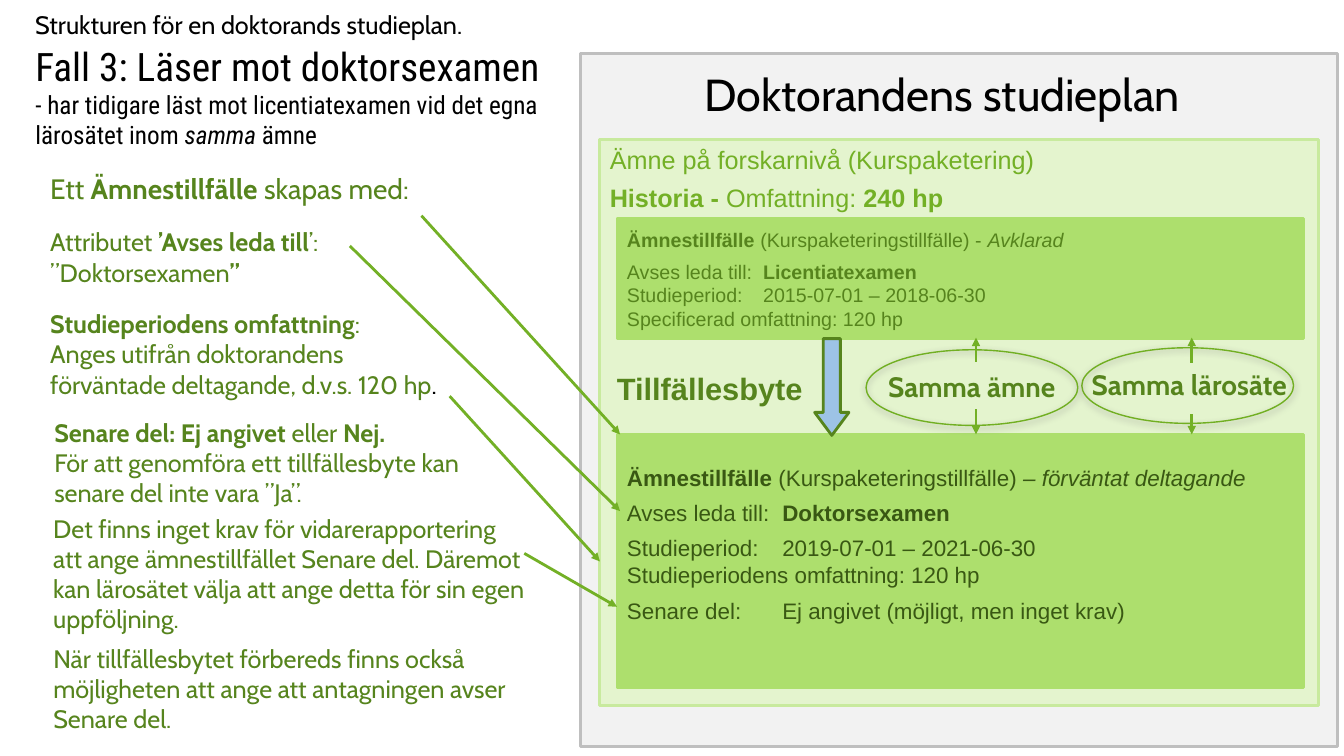
from pptx import Presentation
from pptx import util as u
from pptx.dml.color import RGBColor
from pptx.enum import shapes, text
from pptx.oxml.ns import qn
from lxml import etree

PX = 9144
LEAF, MOSS, PINE = "73B026", "56841D", "395813"


def px(n):
    return u.Emu(n * PX)


def hue(code):
    return RGBColor.from_string(code)


def node(parent, tag, **attrs):
    return etree.SubElement(parent, qn(tag), attrs)


def write(frame, paras, font="Cabin", size=18, color=MOSS, align="LEFT",
          anchor="TOP", after=0, tab=0, foot=5):
    frame.word_wrap = True
    frame.vertical_anchor = getattr(text.MSO_ANCHOR, anchor)
    frame.margin_left = frame.margin_right = px(10)
    frame.margin_top, frame.margin_bottom = px(5), px(foot)
    for i, runs in enumerate(paras):
        para = frame.add_paragraph() if i else frame.paragraphs[0]
        if tab:
            stops = node(para._p.get_or_add_pPr(), "a:tabLst")
            node(stops, "a:tab", pos=str(px(tab)), algn="l")
        para.alignment = getattr(text.PP_ALIGN, align)
        para.space_before, para.space_after = u.Pt(0), u.Pt(after)
        for run in [runs] if isinstance(runs, str) else runs:
            words, *style = (run,) if isinstance(run, str) else run
            look = {"bold": False, "italic": False, "size": size, "color": color}
            look.update(style[0] if style else {})
            for j, part in enumerate(words.split("\n")):
                if j:
                    para.add_line_break()
                if part:
                    piece = para.add_run()
                    piece.text = part
                    piece.font.name, piece.font.size = font, u.Pt(look["size"])
                    piece.font.bold, piece.font.italic = look["bold"], look["italic"]
                    piece.font.color.rgb = hue(look["color"])


def bold(words):
    return words, {"bold": True}


def ital(words):
    return words, {"italic": True}


class Board:
    """Holds the slide and draws its elements in one style."""

    def __init__(self, deck):
        self.slide = deck.slides.add_slide(deck.slide_layouts[5])
        self.shapes = self.slide.shapes

    def title(self, x, y, w, h, paras, **fmt):
        head = self.shapes.title
        head.left, head.top, head.width, head.height = map(px, (x, y, w, h))
        write(head.text_frame, paras, **fmt)
        head.text_frame.auto_size = text.MSO_AUTO_SIZE.NONE

    def shape(self, kind, x, y, w, h, fill, line, width=2):
        item = self.shapes.add_shape(getattr(shapes.MSO_SHAPE, kind), *map(px, (x, y, w, h)))
        item.shadow.inherit = False
        if fill:
            item.fill.solid()
            item.fill.fore_color.rgb = hue(fill)
        else:
            item.fill.background()
        item.line.color.rgb, item.line.width = hue(line), u.Pt(width)
        return item

    def panel(self, x, y, w, h, fill, line, paras=(), **fmt):
        write(self.shape("RECTANGLE", x, y, w, h, fill, line).text_frame, paras, **fmt)

    def ring(self, x, y):
        oval = self.shape("OVAL", x, y, 210, 75, None, "71AF22", 1)
        glow = node(oval._element.spPr.find(qn("a:effectLst")), "a:outerShdw",
                    blurRad=str(u.Pt(5)), dist=str(u.Pt(2)), dir="5400000", rotWithShape="0")
        node(node(glow, "a:srgbClr", val="808080"), "a:alpha", val="75000")

    def label(self, x, y, w, h, *paras, **fmt):
        frame = self.shapes.add_textbox(*map(px, (x, y, w, h))).text_frame
        write(frame, paras, **fmt)
        frame.auto_size = text.MSO_AUTO_SIZE.SHAPE_TO_FIT_TEXT

    def arrow(self, *ends):
        link = self.shapes.add_connector(shapes.MSO_CONNECTOR.STRAIGHT, *map(px, ends))
        link.line.color.rgb, link.line.width = hue(LEAF), u.Pt(2)
        node(link.line._get_or_add_ln(), "a:tailEnd", type="triangle")
        node(link._element.spPr, "a:effectLst")


def main():
    deck = Presentation()
    deck.slide_width, deck.slide_height = px(1333), px(750)
    board = Board(deck)

    board.title(25, 37, 559, 114, [
        [("Fall 3: Läser mot doktorsexamen", {"size": 28})],
        ["- har tidigare läst mot licentiatexamen vid det egna lärosätet inom ",
         ital("samma"), " ämne"],
    ], font="Roboto Condensed", color="000000")
    board.label(25, 4, 462, 40, "Strukturen för en doktorands studieplan.", color="000000")

    board.panel(576, 53, 751, 688, "F2F2F2", "BFBFBF")
    board.label(689, 61, 502, 64, "Doktorandens studieplan", size=32, color="000000")
    board.panel(595, 138, 713, 562, "E4F4CE", "C8EA9E", [
        "Ämne på forskarnivå (Kurspaketering)",
        [bold("Historia - "), "Omfattning: ", bold("240 hp")],
    ], font="Arial", color=LEAF, after=6)
    board.panel(612, 431, 681, 251, "ADDF6D", "ADDF6D", [
        [bold("Ämnestillfälle"), " (Kurspaketeringstillfälle) ", ital("– förväntat deltagande")],
        ["Avses leda till:\t", bold("Doktorsexamen")],
        "Studieperiod:\t2019-07-01 – 2021-06-30\nStudieperiodens omfattning: 120 hp",
        "Senare del:\tEj angivet (möjligt, men inget krav)",
    ], font="Arial", size=16, color=PINE, anchor="MIDDLE", after=6, tab=154, foot=39)
    board.panel(612, 217, 681, 119, "ADDF6D", "ADDF6D", [
        [bold("Ämnestillfälle "), "(Kurspaketeringstillfälle) - ", ital("Avklarad")],
        ["Avses leda till:\t", bold("Licentiatexamen"),
         "\nStudieperiod:\t2015-07-01 – 2018-06-30\nSpecificerad omfattning: 120 hp"],
    ], font="Arial", size=14, anchor="MIDDLE", after=6, tab=135)

    swap = board.shape("RIGHT_ARROW", 777, 367, 96, 34, "9DC3E6", MOSS)
    swap.rotation = 90
    swap.adjustments[1] = 0.67
    board.label(597, 362, 214, 47, [bold("Tillfällesbyte")], font="Arial", size=22, align="CENTER")

    board.label(1073, 360, 236, 44, [bold("Samma lärosäte")], size=20)
    board.ring(1073, 345)
    board.label(871, 362, 194, 44, [bold("Samma ämne")], size=20)
    board.ring(859, 347)
    for x, top, low in (1182, 360, 411), (968, 359, 406):
        board.arrow(x, top, x, 335)
        board.arrow(x, low, x, 431)

    board.label(40, 165, 476, 44, ["Ett ", bold("Ämnestillfälle"), " skapas med:"], size=20)
    board.label(40, 220, 440, 71,
                ["Attributet ", bold("’Avses leda till"), "’: ”Doktorsexamen", bold("”")])
    board.label(40, 301, 426, 101,
                [bold("Studieperiodens omfattning"), ":"],
                ["Anges utifrån doktorandens förväntade deltagande, d.v.s. 120 hp",
                 (".", {"color": "000000"})])
    board.label(44, 409, 494, 101,
                [bold("Senare del: Ej angivet "), "eller ", bold("Nej.")],
                "För att genomföra ett tillfällesbyte kan senare del inte vara ”Ja”.")
    board.label(43, 504, 494, 131,
                "Det finns inget krav för vidarerapportering",
                "att ange ämnestillfället Senare del. Däremot kan lärosätet välja "
                "att ange detta för sin egen uppföljning.")
    board.label(43, 633, 499, 101,
                "När tillfällesbytet förbereds finns också möjligheten att ange "
                "att antagningen avser Senare del.")

    for ends in ((418, 214, 615, 431), (347, 244, 615, 507),
                 (446, 393, 595, 557), (520, 549, 612, 602)):
        board.arrow(*ends)

    deck.save("out.pptx")


if __name__ == "__main__":
    main()
